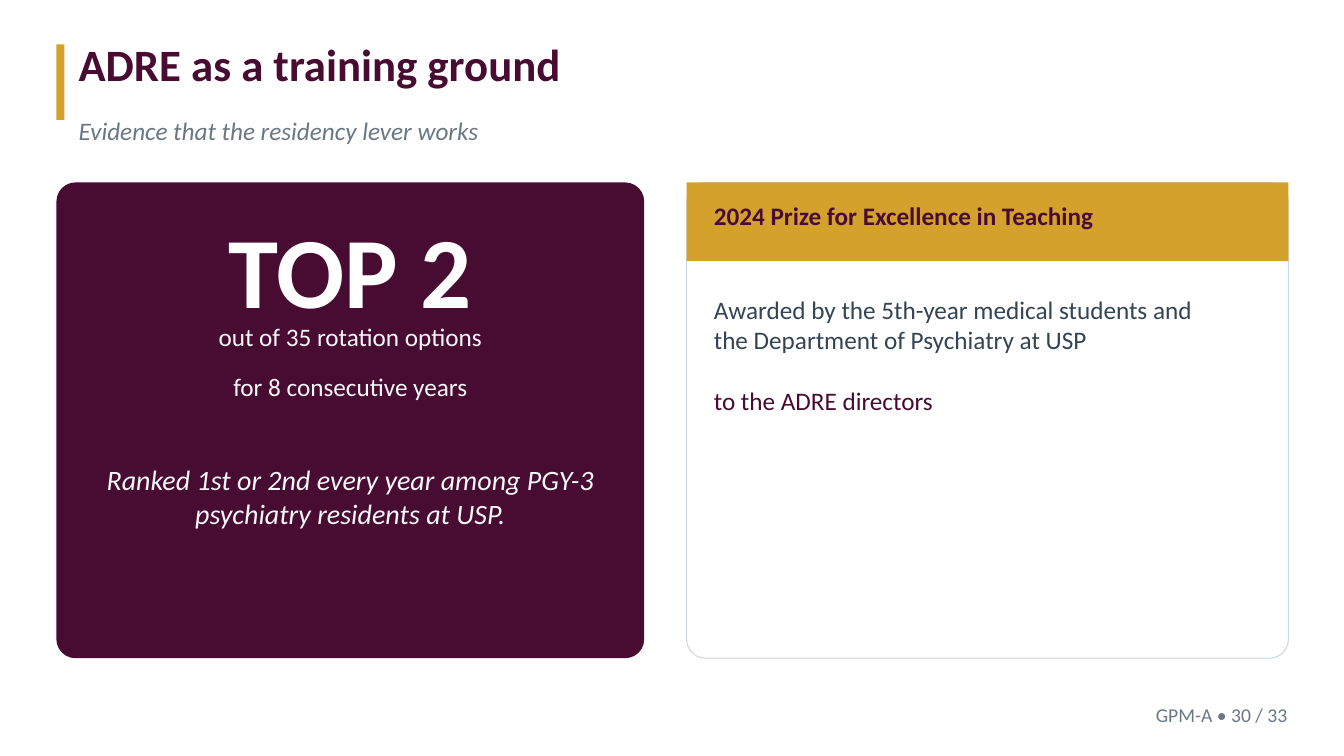
import pptx
import pptx.dml.color
import pptx.enum.shapes
import pptx.enum.text
import pptx.util

Inches = pptx.util.Inches
Pt = pptx.util.Pt
ALIGN = pptx.enum.text.PP_ALIGN
SHAPE = pptx.enum.shapes.MSO_SHAPE

PLUM, GOLD, WHITE = "480C32", "D4A22C", "FFFFFF"
GRAY, PALE, SLATE, BORDER = "6B7785", "F5F7FA", "334455", "D0D7DE"


def rgb(value):
    return pptx.dml.color.RGBColor.from_string(value)


class Deck:
    font = "Calibri"

    def __init__(self, width, height):
        self.prs = pptx.Presentation()
        self.prs.slide_width = Inches(width)
        self.prs.slide_height = Inches(height)

    def add_slide(self):
        self.s = self.prs.slides.add_slide(self.prs.slide_layouts[6])

    def box(self, x, y, w, h, fill, line=None, radius=None):
        kind = SHAPE.RECTANGLE if radius is None else SHAPE.ROUNDED_RECTANGLE
        sp = self.s.shapes.add_shape(kind, Inches(x), Inches(y), Inches(w), Inches(h))
        sp.shadow.inherit = False
        if radius is not None:
            sp.adjustments[0] = radius
        sp.fill.solid()
        sp.fill.fore_color.rgb = rgb(fill)
        if line:
            sp.line.color.rgb = rgb(line)
            sp.line.width = Pt(0.75)
        else:
            sp.line.fill.background()

    def text(self, x, y, w, h, paragraphs, size, align=ALIGN.LEFT, bold=False, italic=False):
        tf = self.s.shapes.add_textbox(Inches(x), Inches(y), Inches(w), Inches(h)).text_frame
        tf.word_wrap = True
        tf.auto_size = pptx.enum.text.MSO_AUTO_SIZE.SHAPE_TO_FIT_TEXT
        tf.margin_left = tf.margin_top = tf.margin_right = tf.margin_bottom = 0
        for i, (words, color, before) in enumerate(paragraphs):
            p = tf.add_paragraph() if i else tf.paragraphs[0]
            p.alignment = align
            if before:
                p.space_before = Pt(before)
            r = p.add_run()
            r.text = words
            r.font.name = self.font
            r.font.size = Pt(size)
            r.font.bold = bold
            r.font.italic = italic
            r.font.color.rgb = rgb(color)


def main():
    deck = Deck(13.33, 7.5)
    deck.add_slide()

    deck.box(0.56, 0.44, 0.08, 0.75, GOLD)
    deck.text(0.78, 0.36, 12, 0.78, [("ADRE as a training ground", PLUM, 0)], 32, bold=True)
    deck.text(0.78, 1.14, 12, 0.42,
              [("Evidence that the residency lever works", GRAY, 0)], 18, italic=True)

    top, height, radius = 1.81, 4.72, 0.04
    left, width = 0.56, 5.83
    deck.box(left, top, width, height, PLUM, radius=radius)
    deck.text(left, 2.06, width, 0.69, [("TOP 2", WHITE, 0)], 72, ALIGN.CENTER, bold=True)
    deck.text(left, 3.19, width, 0.56,
              [("out of 35 rotation options", PALE, 0)], 18, ALIGN.CENTER)
    deck.text(left, 3.68, width, 0.3, [("for 8 consecutive years", PALE, 0)], 18, ALIGN.CENTER)
    ranking = "Ranked 1st or 2nd every year among PGY-3 psychiatry residents at USP."
    deck.text(left + 0.32, 4.59, width - 0.64, 0.67,
              [(ranking, PALE, 0)], 20, ALIGN.CENTER, italic=True)

    left, width = 6.81, 5.97
    inner_left, inner_width = 7.08, 5.42
    deck.box(left, top, width, height, WHITE, line=BORDER, radius=radius)
    deck.box(left, top, width, 0.78, GOLD)
    deck.text(inner_left, 1.99, inner_width, 0.44,
              [("2024 Prize for Excellence in Teaching", PLUM, 0)], 18, bold=True)
    deck.text(inner_left, 2.92, inner_width, 1.51, [
        ("Awarded by the 5th-year medical students and", SLATE, 0),
        ("the Department of Psychiatry at USP", SLATE, 0),
        ("to the ADRE directors", PLUM, 22),
    ], 18)

    deck.text(10.69, 6.97, 2.08, 0.24, [("GPM-A • 30 / 33", GRAY, 0)], 14, ALIGN.RIGHT)

    deck.prs.save("out.pptx")


if __name__ == "__main__":
    main()
